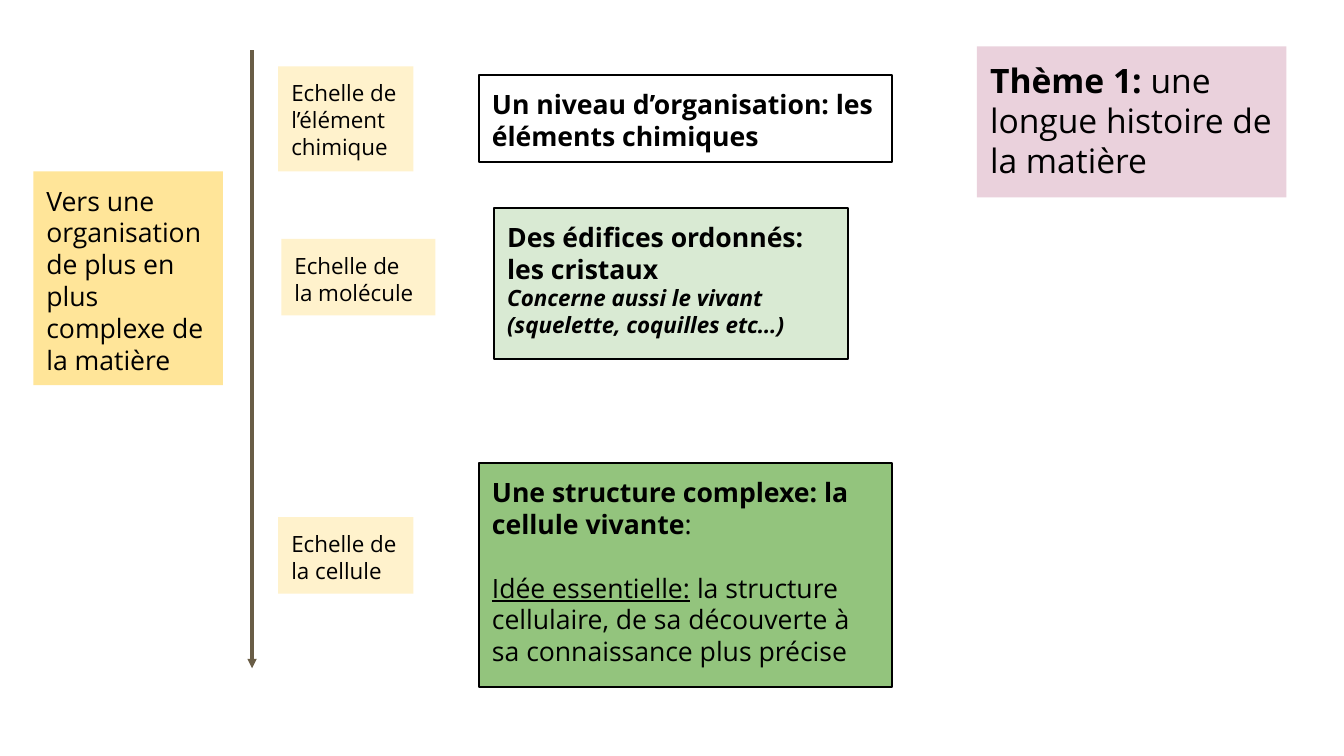
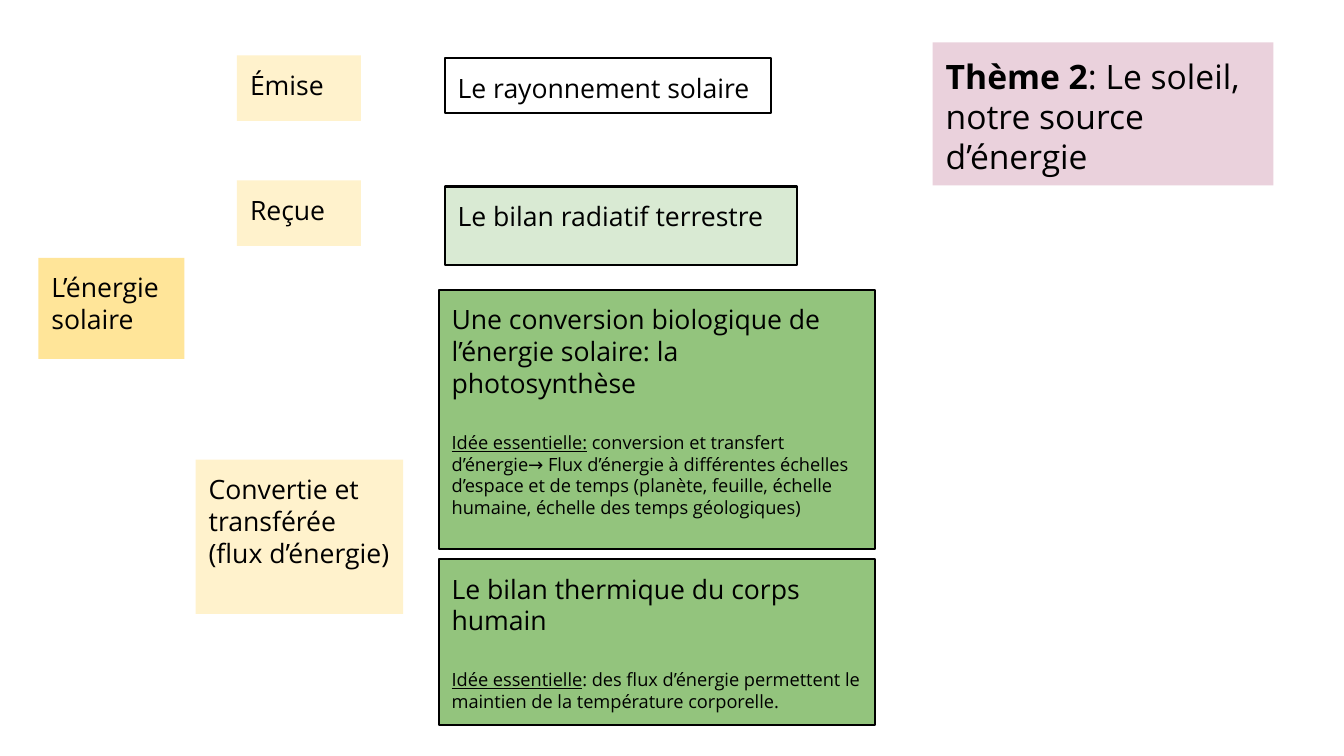
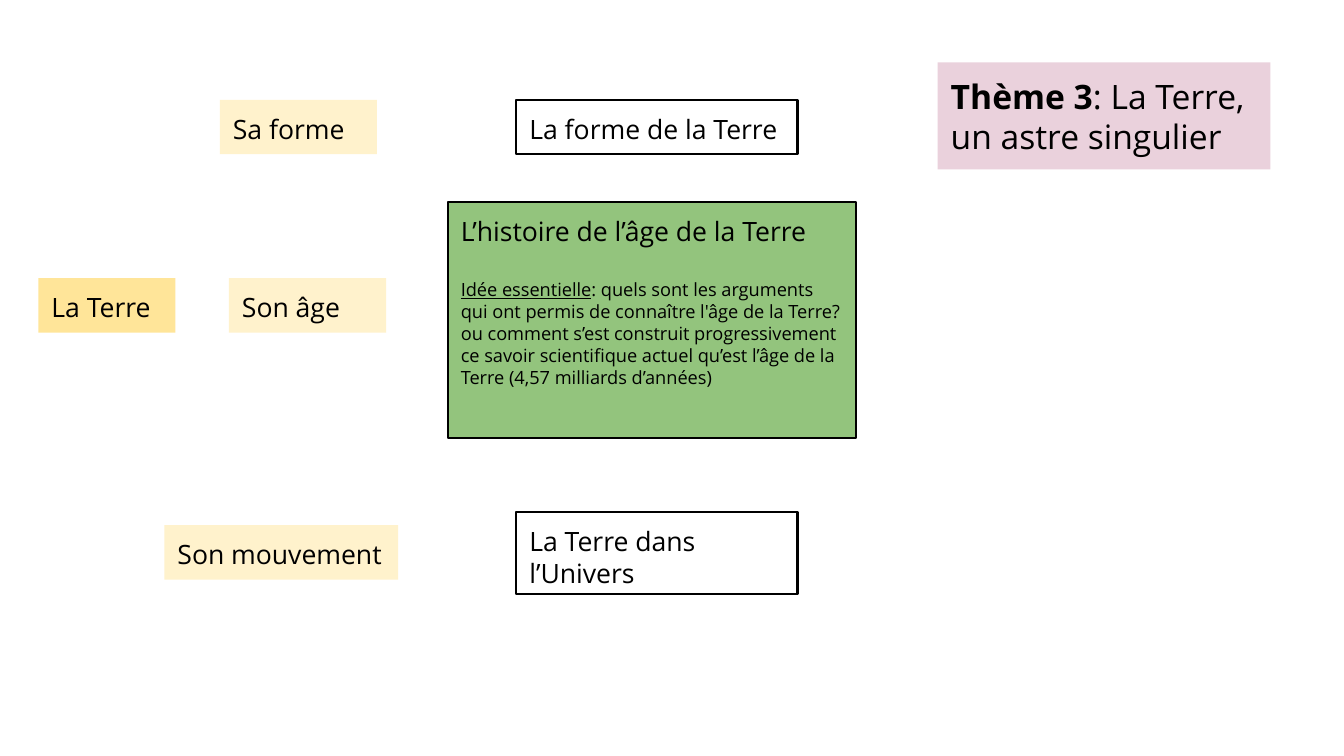
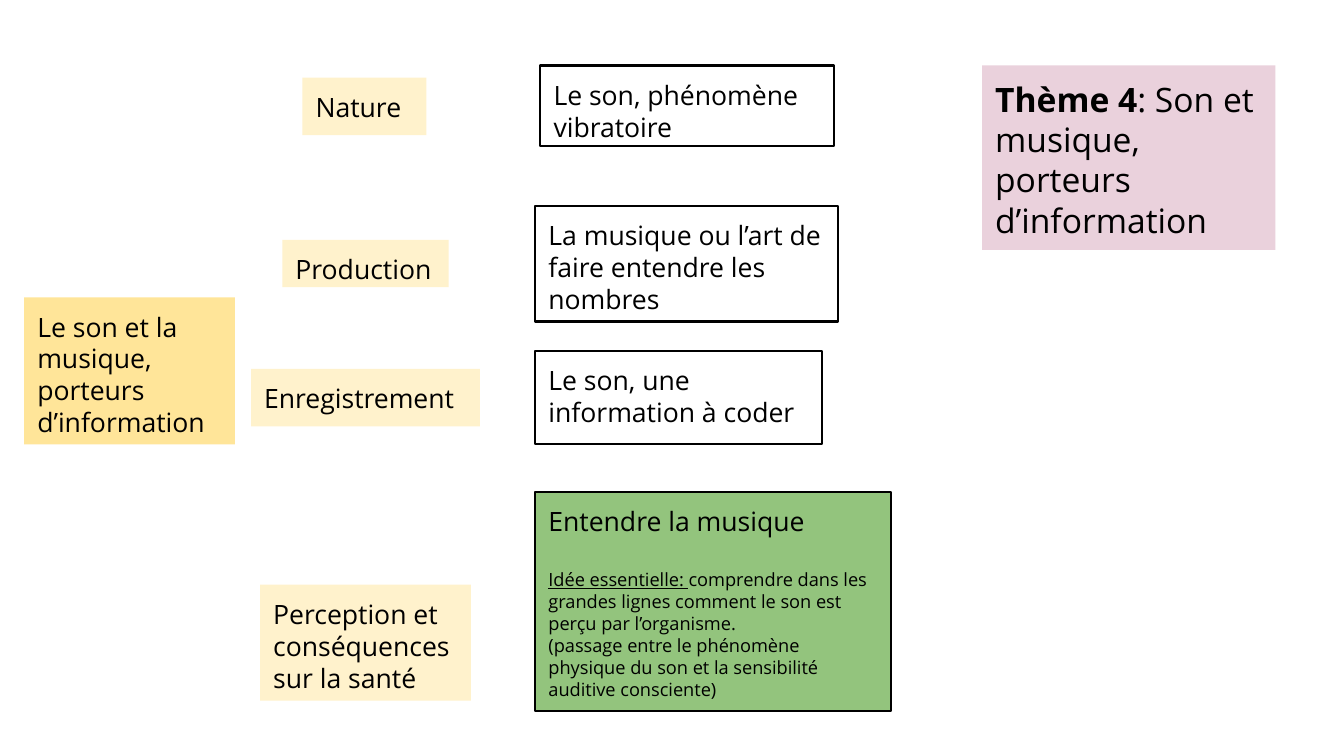
from lxml import etree
from pptx import Presentation
from pptx.dml.color import RGBColor
from pptx.enum.shapes import MSO_CONNECTOR as CONN, MSO_SHAPE as SHAPE
from pptx.enum.text import MSO_ANCHOR as ANCHOR, PP_ALIGN as ALIGN
from pptx.oxml.ns import qn
from pptx.util import Inches, Pt

FONT = "Open Sans"
BLACK = RGBColor(0x00, 0x00, 0x00)
WHITE = RGBColor(0xFF, 0xFF, 0xFF)
PALE_GREEN = RGBColor(0xD9, 0xEA, 0xD3)
GREEN = RGBColor(0x93, 0xC4, 0x7D)
AMBER = RGBColor(0xFF, 0xE5, 0x99)
CREAM = RGBColor(0xFF, 0xF2, 0xCC)
PINK = RGBColor(0xEA, 0xD1, 0xDC)
BROWN = RGBColor(0x69, 0x5D, 0x46)

OUTLINED = (WHITE, PALE_GREEN, GREEN)
INSET = Inches(0.13)
IDEA_GAP = 22.8


def write(tf, text, size=19, bold=False, italic=False, underline=False,
          same_line=False, gap=0):
    """Add a run, in a new paragraph unless same_line is set."""
    p = tf.paragraphs[-1]
    if p.runs and not same_line:
        p = tf.add_paragraph()
    if not same_line:
        p.alignment = ALIGN.LEFT
        p.space_before = Pt(gap)
    r = p.add_run()
    r.text = text
    f = r.font
    f.name, f.size, f.color.rgb = FONT, Pt(size), BLACK
    f.bold, f.italic, f.underline = bold, italic, underline


def box(s, fill, at, text, **fmt):
    """Add a filled rectangle with its first run and return its text frame."""
    sp = s.shapes.add_shape(SHAPE.RECTANGLE, *[Inches(v) for v in at])
    sp.shadow.inherit = False
    sp.fill.solid()
    sp.fill.fore_color.rgb = fill
    if fill in OUTLINED:
        sp.line.color.rgb = BLACK
        sp.line.width = Pt(1.5)
    else:
        sp.line.fill.background()
    tf = sp.text_frame
    tf.word_wrap = True
    tf.vertical_anchor = ANCHOR.TOP
    tf.margin_left = tf.margin_right = tf.margin_top = tf.margin_bottom = INSET
    write(tf, text, **fmt)
    return tf


prs = Presentation()
prs.slide_width, prs.slide_height = Inches(13.33), Inches(7.5)
slides = [prs.slides.add_slide(prs.slide_layouts[6]) for _ in range(4)]

# Theme headings
themes = [
    ((9.69, 0.46, 3.07, 1.5), "Thème 1: ", "une longue histoire de la matière"),
    ((9.25, 0.42, 3.38, 1.42), "Thème 2", ": Le soleil, notre source d’énergie"),
    ((9.3, 0.62, 3.3, 1.06), "Thème 3", ": La Terre, un astre singulier"),
    ((9.74, 0.65, 2.91, 1.83), "Thème 4",
     ": Son et musique, porteurs d’information"),
]
for s, (at, number, title) in zip(slides, themes):
    tf = box(s, PINK, at, number, size=24, bold=True)
    write(tf, title, size=24, same_line=True)

# Slide 1: scales of matter
s = slides[0]
box(s, AMBER, (0.33, 1.7, 1.88, 2.12),
    "Vers une organisation de plus en plus complexe de la matière")
for at, text in [
    ((2.76, 0.66, 1.34, 1.04), "Echelle de l’élément chimique"),
    ((2.79, 2.37, 1.53, 0.76), "Echelle de la molécule"),
    ((2.76, 5.13, 1.34, 0.76), "Echelle de la cellule"),
]:
    box(s, CREAM, at, text, size=16)

box(s, WHITE, (4.75, 0.74, 4.1, 0.87),
    "Un niveau d’organisation: les éléments chimiques", bold=True)
tf = box(s, PALE_GREEN, (4.9, 2.06, 3.51, 1.5),
         "Des édifices ordonnés: les cristaux", bold=True)
write(tf, "Concerne aussi le vivant (squelette, coquilles etc…)",
      size=16, bold=True, italic=True)
tf = box(s, GREEN, (4.75, 4.59, 4.1, 2.23),
         "Une structure complexe: la cellule vivante", bold=True)
write(tf, ":", same_line=True)
write(tf, "Idée essentielle:", underline=True, gap=IDEA_GAP)
write(tf, " la structure cellulaire, de sa découverte à sa connaissance plus précise",
      same_line=True)

# Slide 1: arrow of growing complexity
arrow = s.shapes.add_connector(CONN.STRAIGHT, Inches(2.5), Inches(0.5),
                               Inches(2.5), Inches(6.63))
arrow.line.color.rgb = BROWN
arrow.line.width = Pt(2.25)
etree.SubElement(arrow.line._get_or_add_ln(), qn("a:tailEnd"), type="triangle")
etree.SubElement(arrow._element.spPr, qn("a:effectLst"))

# Slides 2 to 4: subject, aspects and chapters
simple_boxes = [
    [
        (AMBER, (0.38, 2.56, 1.45, 1), "L’énergie solaire"),
        (CREAM, (2.35, 0.55, 1.23, 0.65), "Émise"),
        (CREAM, (2.35, 1.79, 1.23, 0.65), "Reçue"),
        (CREAM, (1.94, 4.56, 2.06, 1.53),
         "Convertie et transférée (flux d’énergie)"),
        (WHITE, (4.41, 0.58, 3.24, 0.54), "Le rayonnement solaire"),
        (PALE_GREEN, (4.41, 1.85, 3.5, 0.78), "Le bilan radiatif terrestre"),
    ],
    [
        (AMBER, (0.38, 2.76, 1.36, 0.54), "La Terre"),
        (CREAM, (2.18, 0.99, 1.56, 0.54), "Sa forme"),
        (CREAM, (2.27, 2.76, 1.56, 0.54), "Son âge"),
        (CREAM, (1.63, 5.21, 2.32, 0.54), "Son mouvement"),
        (WHITE, (5.12, 0.99, 2.79, 0.54), "La forme de la Terre"),
        (WHITE, (5.12, 5.08, 2.79, 0.81), "La Terre dans l’Univers"),
    ],
    [
        (AMBER, (0.24, 2.95, 2.09, 1.46),
         "Le son et la musique, porteurs d’information"),
        (CREAM, (3, 0.77, 1.23, 0.57), "Nature"),
        (CREAM, (2.8, 2.38, 1.65, 0.47), "Production"),
        (CREAM, (2.49, 3.66, 2.27, 0.57), "Enregistrement"),
        (CREAM, (2.58, 5.8, 2.09, 1.15),
         "Perception et conséquences sur la santé"),
        (WHITE, (5.36, 0.65, 2.91, 0.8), "Le son, phénomène vibratoire"),
        (WHITE, (5.31, 2.04, 3, 1.15),
         "La musique ou l’art de faire entendre les nombres"),
        (WHITE, (5.31, 3.48, 2.84, 0.93), "Le son, une information à coder"),
    ],
]
for s, boxes in zip(slides[1:], simple_boxes):
    for fill, at, text in boxes:
        box(s, fill, at, text)

# Slides 2 to 4: chapters with their key idea
ideas = [
    (slides[1], (4.35, 2.88, 4.33, 2.57),
     "Une conversion biologique de l’énergie solaire: la photosynthèse",
     "Idée essentielle:",
     [" conversion et transfert d’énergie→ Flux d’énergie à différentes échelles "
      "d’espace et de temps (planète, feuille, échelle humaine, échelle des temps "
      "géologiques)"]),
    (slides[1], (4.35, 5.55, 4.33, 1.64),
     "Le bilan thermique du corps humain",
     "Idée essentielle",
     [": des flux d’énergie permettent le maintien de la température corporelle."]),
    (slides[2], (4.44, 2, 4.05, 2.35),
     "L’histoire de l’âge de la Terre",
     "Idée essentielle",
     [": quels sont les arguments qui ont permis de connaître l'âge de la Terre? "
      "ou comment s’est construit progressivement ce savoir scientifique actuel "
      "qu’est l’âge de la Terre (4,57 milliards d’années)"]),
    (slides[3], (5.31, 4.88, 3.53, 2.17),
     "Entendre la musique",
     "Idée essentielle: ",
     ["comprendre dans les grandes lignes comment le son est perçu par l’organisme.",
      "(passage entre le phénomène physique du son et la sensibilité auditive "
      "consciente)"]),
]
for s, at, chapter, label, lines in ideas:
    tf = box(s, GREEN, at, chapter)
    write(tf, label, size=13, underline=True, gap=IDEA_GAP)
    for i, line in enumerate(lines):
        write(tf, line, size=13, same_line=i == 0)

prs.save("out.pptx")
